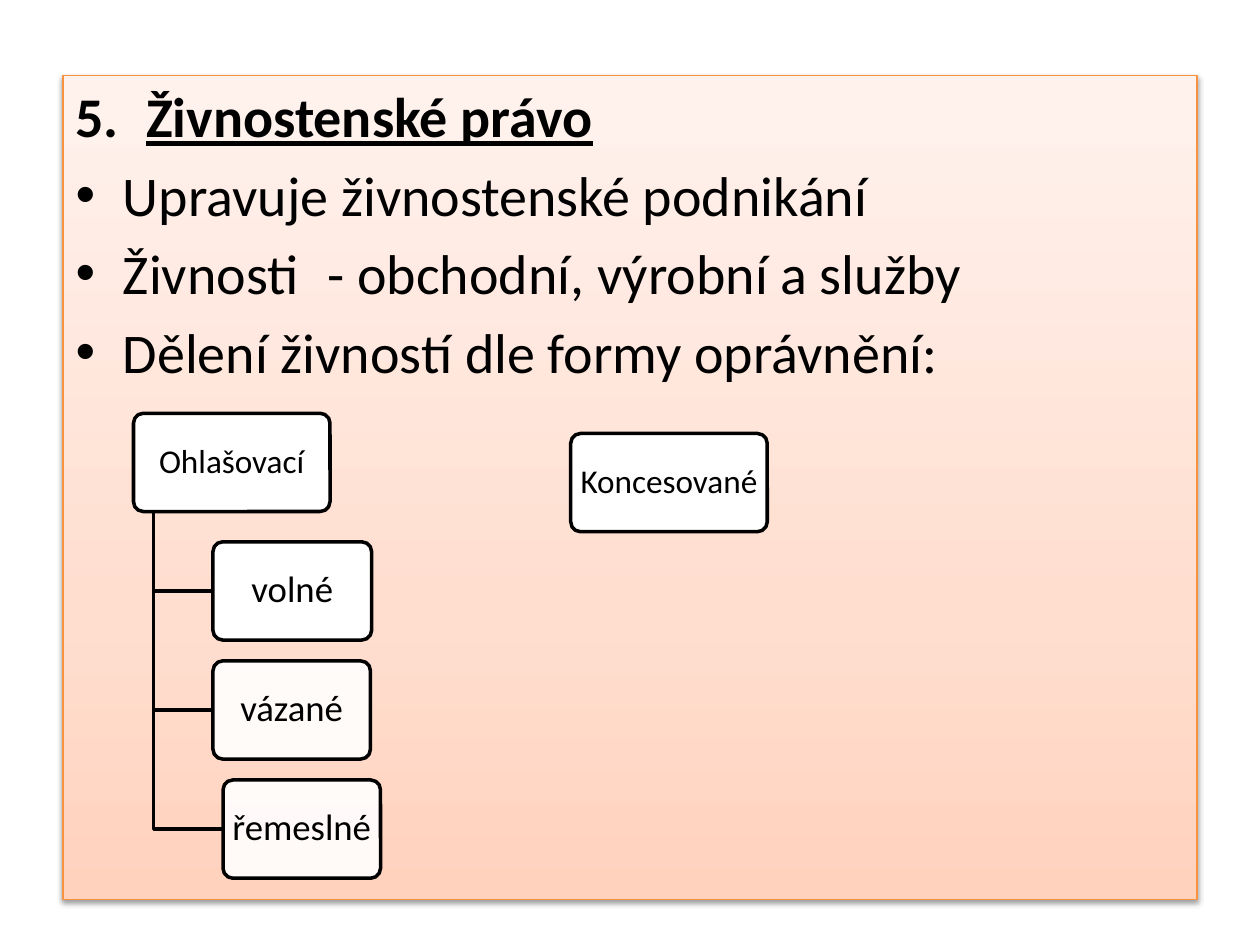
from dataclasses import dataclass

from lxml import etree
from pptx import Presentation
from pptx import util as u
from pptx.dml.color import RGBColor
from pptx.enum import shapes, text
from pptx.oxml import parse_xml
from pptx.oxml.ns import nsdecls, qn


@dataclass(frozen=True)
class Theme:
    font: str = "Calibri"
    ink: str = "000000"
    node: str = "FFFFFF"
    frame: str = "F69240"
    panel_stops: tuple = ((0, "FFD2BD"), (35, "FFDED0"), (100, "FFF2ED"))
    body_size: int = 32
    head_size: int = 19
    branch_size: int = 21
    frame_width: float = 0.75
    node_width: float = 2


THEME = Theme()
HEADING = "Živnostenské právo"
POINTS = (
    "Upravuje živnostenské podnikání",
    "Živnosti \t- obchodní, výrobní a služby",
    "Dělení živností dle formy oprávnění:",
)
# name, indent from the head box, width, opacity in percent
BRANCHES = (
    ("volné", 0.63, 1.26, 100),
    ("vázané", 0.63, 1.25, 90),
    ("řemeslné", 0.71, 1.25, 90),
)
HEAD_WIDTH, NODE_HEIGHT = 1.56, 0.78
FIRST_BRANCH, BRANCH_STEP = 1.02, 0.945
TRUNK_INDENT = 0.16


def color(value):
    return RGBColor.from_string(value)


def add_run(paragraph, words, size, bold=False, underline=False):
    run = paragraph.add_run()
    run.text = words
    font = run.font
    font.name, font.size = THEME.font, u.Pt(size)
    font.bold, font.underline = bold, underline
    font.color.rgb = color(THEME.ink)


def outline(shape, tint, width):
    shape.line.color.rgb = color(tint)
    shape.line.width = u.Pt(width)


def style_panel(panel):
    """Gradient fill, thin frame and soft shadow below."""
    panel.fill.gradient()
    panel.fill.gradient_angle = 90
    stops = panel._element.spPr.find(qn("a:gradFill")).find(qn("a:gsLst"))
    for stop in list(stops):
        stops.remove(stop)
    for percent, tint in THEME.panel_stops:
        stop = etree.SubElement(stops, qn("a:gs"), pos=str(percent * 1000))
        etree.SubElement(stop, qn("a:srgbClr"), val=tint)
    outline(panel, THEME.frame, THEME.frame_width)
    panel._element.spPr.append(parse_xml(
        f'<a:effectLst {nsdecls("a")}>'
        f'<a:outerShdw blurRad="{u.Pt(3.1)}" dist="{u.Pt(1.6)}" dir="5400000" rotWithShape="0">'
        f'<a:srgbClr val="{THEME.ink}"><a:alpha val="38000"/></a:srgbClr>'
        '</a:outerShdw></a:effectLst>'))


def number_paragraph(paragraph, start):
    props = paragraph._p.get_or_add_pPr()
    indent = u.Inches(0.56)
    props.set("marL", str(indent))
    props.set("indent", str(-indent))
    etree.SubElement(props, qn("a:buFont"), typeface="+mj-lt")
    etree.SubElement(props, qn("a:buAutoNum"), type="arabicPeriod", startAt=str(start))


def fill_body(panel, left, top, width, height):
    panel.left, panel.top = u.Inches(left), u.Inches(top)
    panel.width, panel.height = u.Inches(width), u.Inches(height)
    style_panel(panel)
    frame = panel.text_frame
    frame.auto_size = text.MSO_AUTO_SIZE.NONE
    heading = frame.paragraphs[0]
    number_paragraph(heading, 5)
    add_run(heading, HEADING, THEME.body_size, bold=True, underline=True)
    for point in POINTS:
        add_run(frame.add_paragraph(), point, THEME.body_size)


def add_node(slide, label, left, top, width, size, opacity=100):
    node = slide.shapes.add_shape(
        shapes.MSO_SHAPE.ROUNDED_RECTANGLE,
        u.Inches(left), u.Inches(top), u.Inches(width), u.Inches(NODE_HEIGHT))
    node.adjustments[0] = 0.1
    node.shadow.inherit = False
    node.fill.solid()
    node.fill.fore_color.rgb = color(THEME.node)
    if opacity < 100:
        tint = node._element.spPr.find(qn("a:solidFill"))[0]
        etree.SubElement(tint, qn("a:alpha"), val=str(opacity * 1000))
    outline(node, THEME.ink, THEME.node_width)
    frame = node.text_frame
    frame.word_wrap = True
    frame.vertical_anchor = text.MSO_ANCHOR.MIDDLE
    frame.margin_left = frame.margin_right = u.Inches(0.04)
    frame.margin_top = frame.margin_bottom = u.Inches(0.03)
    paragraph = frame.paragraphs[0]
    paragraph.alignment = text.PP_ALIGN.CENTER
    paragraph.line_spacing = 0.9
    add_run(paragraph, label, size)


def add_elbow(slide, trunk, top, branch_left, branch_middle):
    builder = slide.shapes.build_freeform(u.Inches(trunk), u.Inches(top))
    builder.add_line_segments(
        [(u.Inches(trunk), u.Inches(branch_middle)),
         (u.Inches(branch_left), u.Inches(branch_middle))], close=False)
    elbow = builder.convert_to_shape()
    elbow.fill.background()
    elbow.shadow.inherit = False
    outline(elbow, THEME.ink, THEME.node_width)


def add_tree(slide, head, branches, left, top):
    """Head box with its branches hanging from a trunk line."""
    add_node(slide, head, left, top, HEAD_WIDTH, THEME.head_size)
    for row, (label, indent, width, opacity) in enumerate(branches):
        branch_left = left + indent
        branch_top = top + FIRST_BRANCH + row * BRANCH_STEP
        add_elbow(slide, left + TRUNK_INDENT, top + NODE_HEIGHT,
                  branch_left, branch_top + NODE_HEIGHT / 2)
        add_node(slide, label, branch_left, branch_top, width,
                 THEME.branch_size, opacity)


def main():
    deck = Presentation()
    deck.slide_width, deck.slide_height = u.Inches(10), u.Inches(7.5)
    slide = deck.slides.add_slide(deck.slide_layouts[1])
    title = slide.shapes.title._element
    title.getparent().remove(title)
    fill_body(slide.placeholders[1], 0.5, 0.6, 9, 6.54)
    add_tree(slide, "Ohlašovací", BRANCHES, 1.06, 3.28)
    add_tree(slide, "Koncesované", (), 4.53, 3.44)
    deck.save("out.pptx")


if __name__ == "__main__":
    main()
